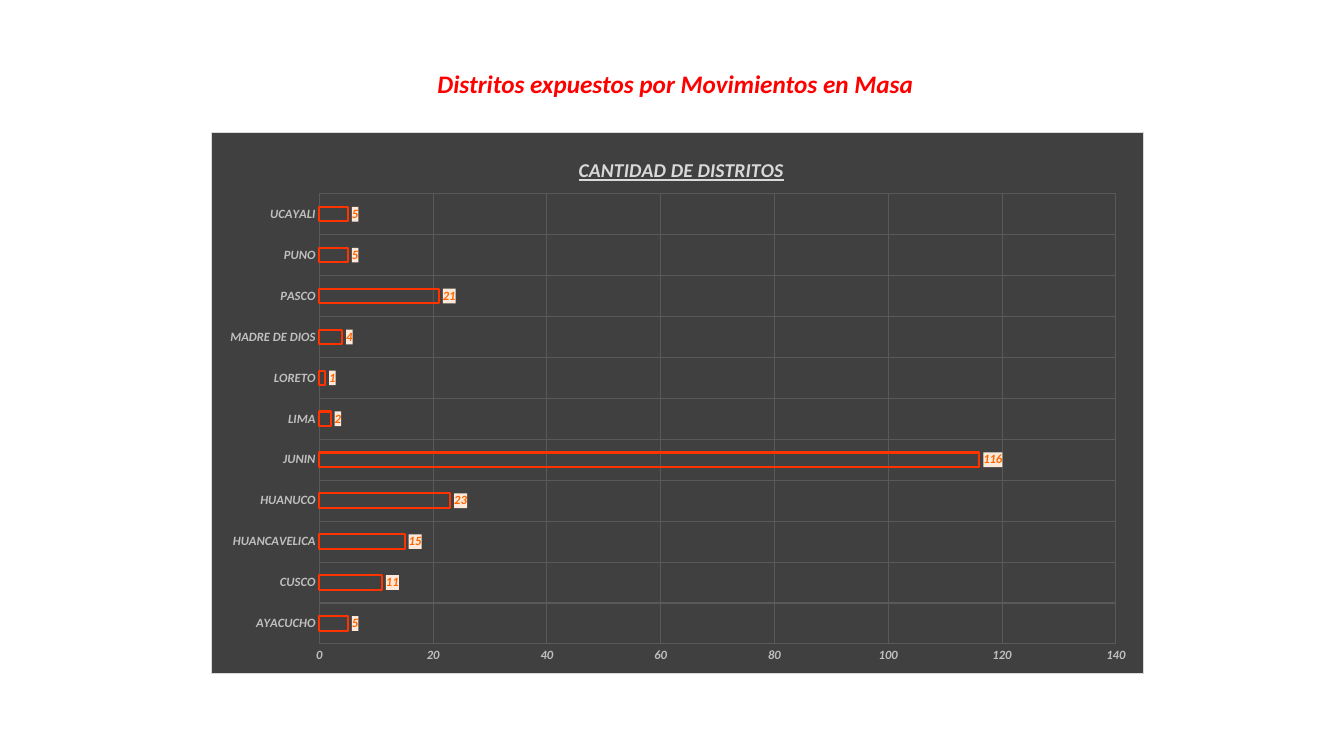
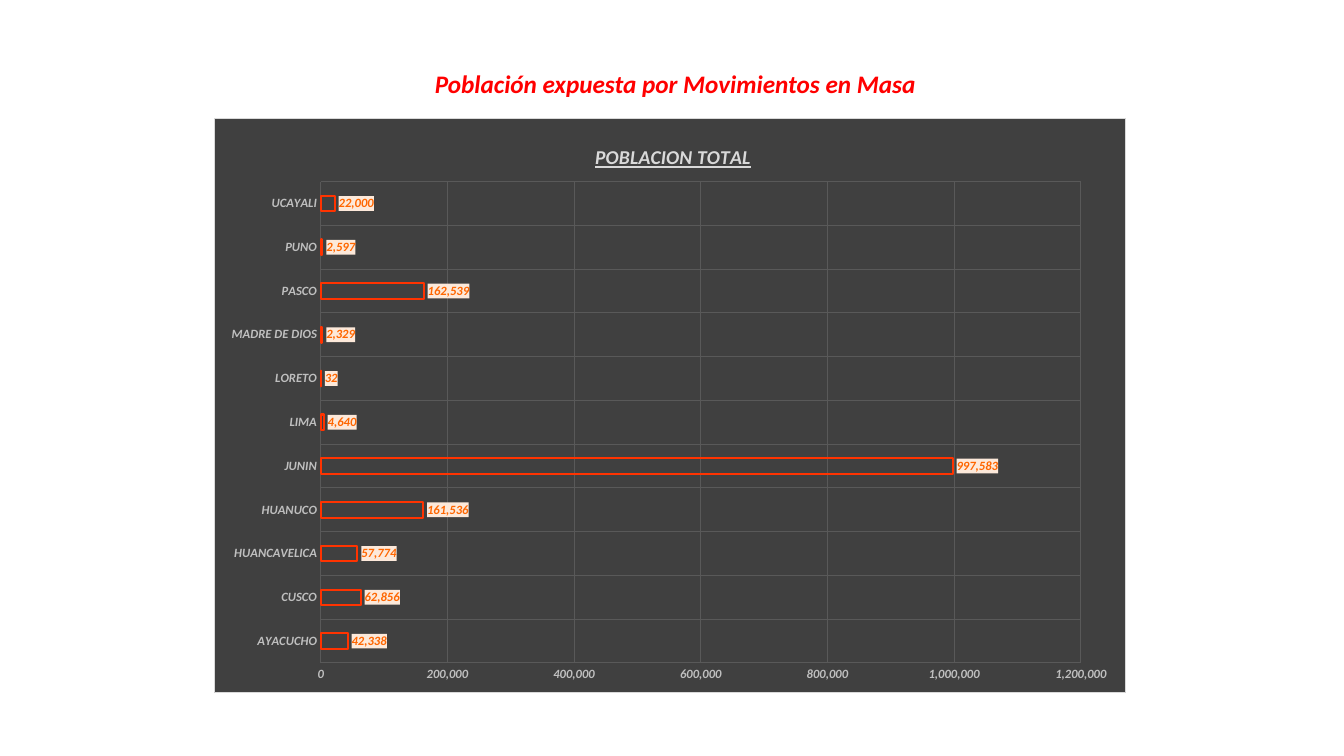
from dataclasses import dataclass
from typing import NamedTuple

from lxml.etree import SubElement
from pptx import Presentation
from pptx.chart.data import CategoryChartData
from pptx.dml.color import RGBColor
from pptx.enum.chart import XL_CHART_TYPE, XL_LABEL_POSITION, XL_TICK_MARK
from pptx.enum.text import MSO_ANCHOR, PP_ALIGN
from pptx.oxml import parse_xml
from pptx.oxml.ns import nsdecls, qn
from pptx.util import Inches, Pt

FONT = "Calibri"
RED, ORANGE_RED, ORANGE, PEACH = "FF0000", "FF3300", "FF6600", "FDE9DA"
DARK, GRID, SILVER, PALE = "404040", "595959", "BFBFBF", "D9D9D9"
NUMBER_FORMAT = "#,##0"
REGIONS = ["AYACUCHO", "CUSCO", "HUANCAVELICA", "HUANUCO", "JUNIN", "LIMA",
           "LORETO", "MADRE DE DIOS", "PASCO", "PUNO", "UCAYALI"]


class Box(NamedTuple):
    """Left, top, width and height as percentages of the container."""
    left: float
    top: float
    width: float
    height: float


@dataclass
class ChartSlide:
    title: str
    chart_title: str
    values: list[int]
    step: int
    maximum: int
    frame: Box
    plot: Box
    heading: tuple[float, float]


TITLE_BOX = Box(31.25, 8.4, 38, 5.33)
SLIDES = [
    ChartSlide("Distritos expuestos por Movimientos en Masa", "CANTIDAD DE DISTRITOS",
               [5, 11, 15, 23, 116, 2, 1, 4, 21, 5, 5], 20, 140,
               Box(15.68, 17.47, 69.47, 71.73), Box(11.6, 11.3, 85.4, 83.2), (39, 3.8)),
    ChartSlide("Población expuesta por Movimientos en Masa", "POBLACION TOTAL",
               [42338, 62856, 57774, 161536, 997583, 4640, 32, 2329, 162539, 2597, 22000],
               200000, 1200000,
               Box(15.9, 15.6, 67.89, 76.13), Box(11.7, 11, 83.4, 83.8), (41.4, 3.7)),
]


def rgb(color: str) -> RGBColor:
    return RGBColor.from_string(color)


def style_font(font, size: float, color: str) -> None:
    font.name, font.size = FONT, Pt(size)
    font.bold = font.italic = True
    font.color.rgb = rgb(color)


def style_line(line, color: str, width: float) -> None:
    line.color.rgb = rgb(color)
    line.width = Pt(width)


def place(prs, box: Box) -> tuple[int, int, int, int]:
    w, h = prs.slide_width, prs.slide_height
    return (int(w * box.left / 100), int(h * box.top / 100),
            int(w * box.width / 100), int(h * box.height / 100))


def area_xml(fill: str = "", border: str = ""):
    """Shape properties for chart parts that have no format object."""
    def paint(color: str) -> str:
        return (f'<a:solidFill><a:srgbClr val="{color}"/></a:solidFill>'
                if color else "<a:noFill/>")
    return parse_xml(f'<c:spPr {nsdecls("c", "a")}>{paint(fill)}'
                     f'<a:ln w="{Pt(0.75)}">{paint(border)}</a:ln></c:spPr>')


def set_layout(layout, shares: dict[str, float], inner: bool = False) -> None:
    for child in list(layout):
        layout.remove(child)
    manual = SubElement(layout, qn("c:manualLayout"))
    if inner:
        SubElement(manual, qn("c:layoutTarget")).set("val", "inner")
    for name in ("xMode", "yMode"):
        SubElement(manual, qn(f"c:{name}")).set("val", "edge")
    for name, share in shares.items():
        SubElement(manual, qn(f"c:{name}")).set("val", str(round(share / 100, 4)))


def get_layout(parent, index: int):
    layout = parent.find(qn("c:layout"))
    if layout is None:
        layout = parent.makeelement(qn("c:layout"), {})
        parent.insert(index, layout)
    return layout


def add_title(prs, s, text: str) -> None:
    sp = s.shapes.title
    sp.left, sp.top, sp.width, sp.height = place(prs, TITLE_BOX)
    tf = sp.text_frame
    tf.word_wrap = False
    tf.vertical_anchor = MSO_ANCHOR.MIDDLE
    p = tf.paragraphs[0]
    p.alignment = PP_ALIGN.CENTER
    r = p.add_run()
    r.text = text
    style_font(r.font, 18, RED)


def style_axis(axis) -> None:
    axis.has_major_gridlines = True
    style_line(axis.major_gridlines.format.line, GRID, 0.75)
    axis.major_tick_mark = axis.minor_tick_mark = XL_TICK_MARK.NONE
    axis.format.line.fill.background()
    style_font(axis.tick_labels.font, 9, SILVER)


def add_chart(prs, s, spec_: ChartSlide) -> None:
    data = CategoryChartData(number_format=NUMBER_FORMAT)
    data.categories = REGIONS
    data.add_series("Series 1", spec_.values)
    chart = s.shapes.add_chart(XL_CHART_TYPE.BAR_CLUSTERED,
                               *place(prs, spec_.frame), data).chart
    chart.has_legend = False
    chart.font.name, chart.font.size = FONT, Pt(10)

    # Chart heading
    chart.has_title = True
    title = chart.chart_title
    title.include_in_layout = False
    r = title.text_frame.paragraphs[0].add_run()
    r.text = spec_.chart_title
    style_font(r.font, 14, PALE)
    r.font.underline = True
    title_xml = title._element
    set_layout(get_layout(title_xml, 1), dict(zip("xy", spec_.heading)))

    # Axes
    style_axis(chart.category_axis)
    axis = chart.value_axis
    style_axis(axis)
    axis.minimum_scale, axis.maximum_scale = 0, spec_.maximum
    axis.major_unit = spec_.step
    axis.tick_labels.number_format = NUMBER_FORMAT
    axis.tick_labels.number_format_is_linked = False

    # Outlined bars and their labels
    bars = chart.plots[0]
    bars.gap_width, bars.overlap, bars.vary_by_categories = 182, -50, False
    series = bars.series[0]
    series.format.fill.background()
    style_line(series.format.line, ORANGE_RED, 1.5)
    labels = series.data_labels
    labels.show_value = True
    labels.position = XL_LABEL_POSITION.OUTSIDE_END
    labels.number_format, labels.number_format_is_linked = NUMBER_FORMAT, False
    style_font(labels.font, 9, ORANGE)
    labels._element.find(qn("c:txPr")).addprevious(area_xml(PEACH))

    # Dark chart area and plot position
    root = chart._chartSpace
    root.find(qn("c:chart")).addnext(area_xml(DARK, PALE))
    plot_area = root.find(qn("c:chart")).find(qn("c:plotArea"))
    plot_area.append(area_xml())
    set_layout(get_layout(plot_area, 0), dict(zip("xywh", spec_.plot)), inner=True)


def main() -> None:
    prs = Presentation()
    prs.slide_width, prs.slide_height = Inches(13.33), Inches(7.5)
    title_only = prs.slide_layouts[5]
    for chart_slide in SLIDES:
        s = prs.slides.add_slide(title_only)
        add_title(prs, s, chart_slide.title)
        add_chart(prs, s, chart_slide)
    prs.save("out.pptx")


if __name__ == "__main__":
    main()
